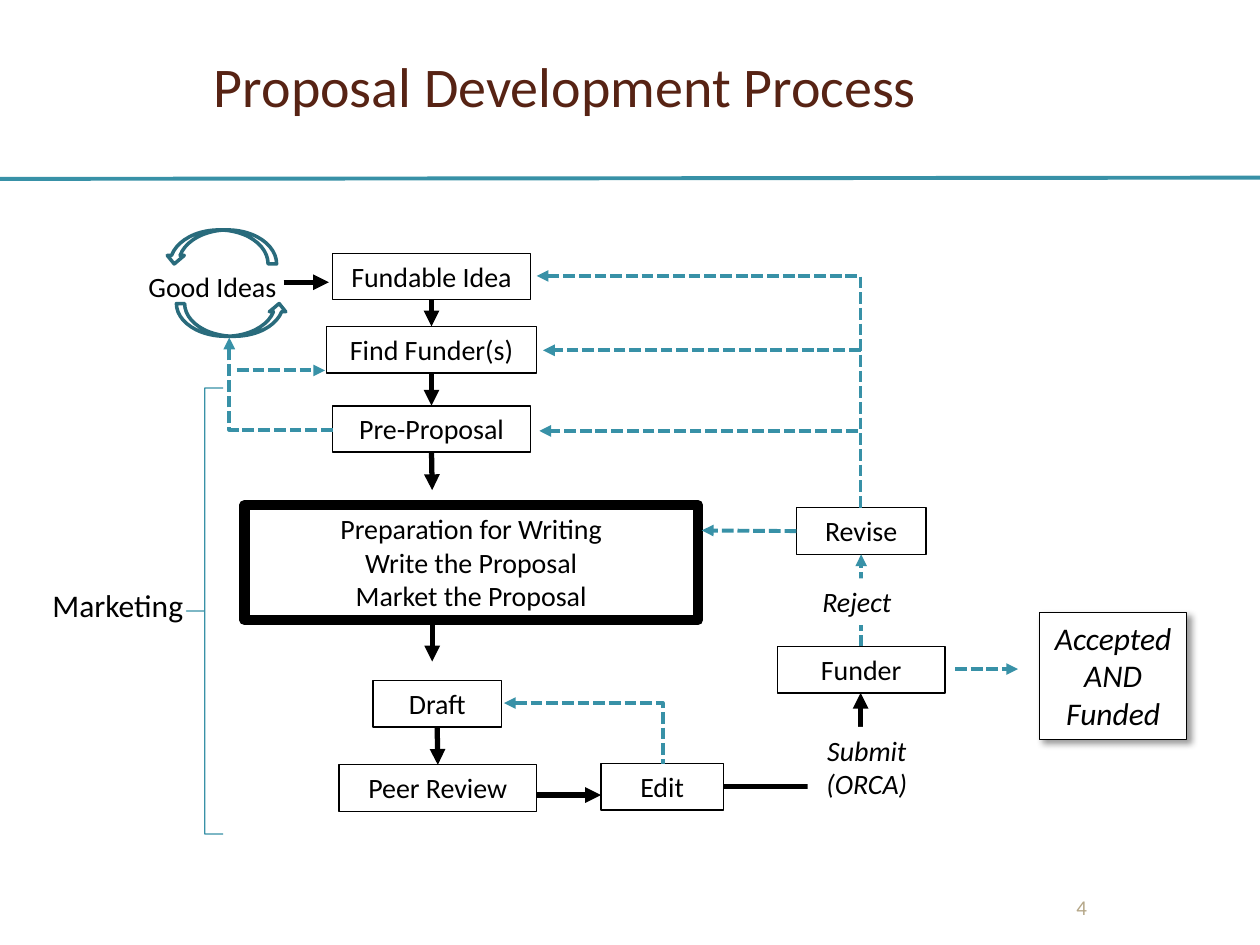
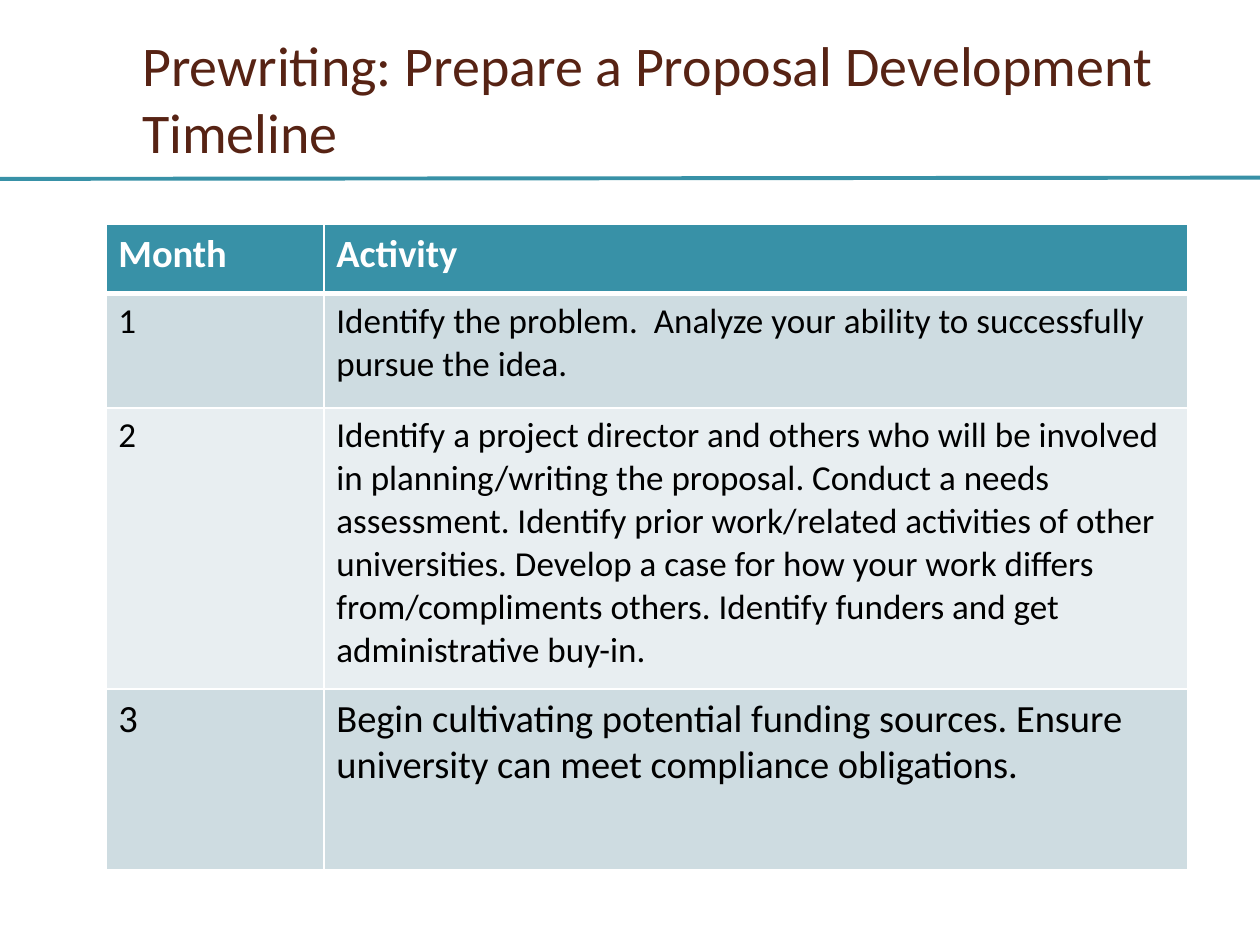
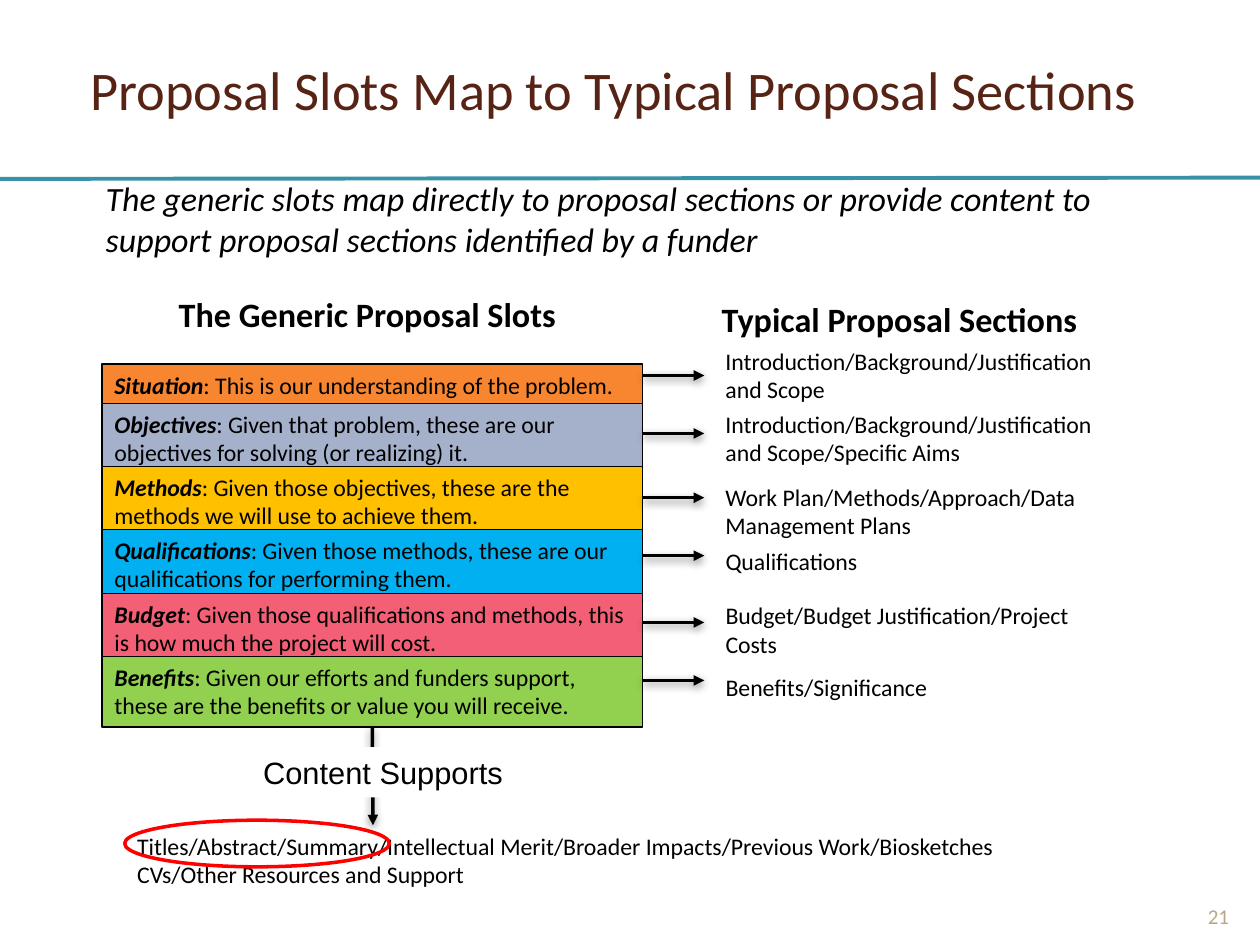
from dataclasses import dataclass

from lxml import etree
from pptx import Presentation
from pptx.dml.color import RGBColor
from pptx.enum.dml import MSO_LINE
from pptx.enum.shapes import MSO_CONNECTOR, MSO_SHAPE
from pptx.enum.text import MSO_ANCHOR, PP_ALIGN
from pptx.oxml.ns import qn
from pptx.util import Inches, Pt

LEFT, CENTER = PP_ALIGN.LEFT, PP_ALIGN.CENTER
TOP, MIDDLE, BOTTOM = MSO_ANCHOR.TOP, MSO_ANCHOR.MIDDLE, MSO_ANCHOR.BOTTOM
STRAIGHT, ELBOW = MSO_CONNECTOR.STRAIGHT, MSO_CONNECTOR.ELBOW
SHORT_DASH = MSO_LINE.SQUARE_DOT
RECTANGLE, OVAL = MSO_SHAPE.RECTANGLE, MSO_SHAPE.OVAL
CURVED_ARROW, BRACE = MSO_SHAPE.CURVED_RIGHT_ARROW, MSO_SHAPE.LEFT_BRACE
SITE_TOP, SITE_LEFT, SITE_BOTTOM = 0, 1, 2

BLACK, WHITE, RED = "000000", "FFFFFF", "FF0000"
TEAL, DARK_TEAL = "3891A7", "296B7C"
BROWN, TAN = "572314", "B5A788"
BAND_DARK, BAND_LIGHT = "CEDCE1", "E8EEF1"


@dataclass(frozen=True)
class TextStyle:
    size: float
    color: str = BLACK
    bold: bool = False
    italic: bool = False
    align: int = LEFT
    anchor: int = TOP
    font: str = "Calibri"


@dataclass(frozen=True)
class Shadow:
    alpha: int
    blur: float
    distance: float
    angle: int


@dataclass(frozen=True)
class Box:
    text: str
    at: tuple
    line_width: float = 0.75
    fill: str = ""


@dataclass(frozen=True)
class Arrow:
    start: tuple
    end: tuple
    color: str = BLACK
    width: float = 3
    bent: bool = False  # horizontal leg first, then vertical
    head: str = "tailEnd"
    begin_at: tuple = ()  # (box text, connection site)
    end_at: tuple = ()


@dataclass(frozen=True)
class Slot:
    name: str
    meaning: str
    color: str
    top: float
    height: float
    arrow_y: float
    section: str
    section_top: float
    section_width: float = 3.3


TITLE = TextStyle(32, BROWN, anchor=MIDDLE)
PAGE_NUMBER = TextStyle(12, TAN, align=CENTER, anchor=BOTTOM)
BOX_TEXT = TextStyle(16, align=CENTER)
BOX_ITALIC = TextStyle(16, italic=True, align=CENTER)
SMALL = TextStyle(13.6)
HEADING = TextStyle(19.5, bold=True)
CARD_SHADOW = Shadow(40, 4, 3, 45)
ARROW_SHADOW = Shadow(43, 5, 2, 90)


# ---- Shared helpers ----
def rgb(color: str) -> RGBColor:
    return RGBColor.from_string(color)


def inches(values: tuple) -> list:
    return [Inches(value) for value in values]


def add_run(paragraph, text: str, style: TextStyle, **changes) -> None:
    run = paragraph.add_run()
    run.text = text
    formats = {"name": style.font, "size": Pt(style.size),
               "bold": style.bold, "italic": style.italic} | changes
    for name, value in formats.items():
        setattr(run.font, name, value)
    run.font.color.rgb = rgb(style.color)


def write_text(frame, text: str, style: TextStyle, lead: str = "") -> None:
    """Write one paragraph per line; lead opens the text in bold italic."""
    frame.word_wrap = True
    frame.vertical_anchor = style.anchor
    for index, line in enumerate(text.split("\n")):
        paragraph = frame.add_paragraph() if index else frame.paragraphs[0]
        paragraph.alignment = style.align
        if lead and not index:
            add_run(paragraph, lead, style, bold=True, italic=True)
        add_run(paragraph, line, style)


def add_text(slide, text: str, at: tuple, style: TextStyle) -> None:
    write_text(slide.shapes.add_textbox(*inches(at)).text_frame, text, style)


def set_shadow(shape, shadow: Shadow) -> None:
    properties = shape._element.spPr
    effects = properties.find(qn("a:effectLst"))
    outer = etree.SubElement(effects, qn("a:outerShdw"), {
        "blurRad": str(Pt(shadow.blur)), "dist": str(Pt(shadow.distance)),
        "dir": str(shadow.angle * 60000), "rotWithShape": "0"})
    color = etree.SubElement(outer, qn("a:srgbClr"), val=BLACK)
    etree.SubElement(color, qn("a:alpha"), val=str(shadow.alpha * 1000))


def add_shape(slide, kind, at: tuple, fill: str = "", line: str = "",
              line_width: float = 0.75):
    shape = slide.shapes.add_shape(kind, *inches(at))
    shape.shadow.inherit = False
    if fill:
        shape.fill.solid()
        shape.fill.fore_color.rgb = rgb(fill)
    else:
        shape.fill.background()
    if line:
        shape.line.color.rgb = rgb(line)
        shape.line.width = Pt(line_width)
    else:
        shape.line.fill.background()
    return shape


def add_line(slide, start: tuple, end: tuple, color: str, width: float,
             dashed: bool = False, head: str = "", bent: bool = False):
    kind = ELBOW if bent else STRAIGHT
    connector = slide.shapes.add_connector(kind, *inches(start + end))
    properties = connector._element.spPr
    if bent:
        properties.find(qn("a:prstGeom")).set("prst", "bentConnector2")
    connector.line.color.rgb = rgb(color)
    connector.line.width = Pt(width)
    if dashed:
        connector.line.dash_style = SHORT_DASH
    if head:
        etree.SubElement(properties.find(qn("a:ln")), qn(f"a:{head}"), type="triangle")
    etree.SubElement(properties, qn("a:effectLst"))
    return connector


def add_base_slide(presentation, title: str, title_at: tuple,
                   title_style: TextStyle = TITLE):
    slide = presentation.slides.add_slide(presentation.slide_layouts[6])
    add_line(slide, (0, 1.42), (10, 1.41), TEAL, 2.25)
    add_text(slide, title, title_at, title_style)
    return slide


# ---- Slide 1: process diagram ----
BOXES = [
    Box("Fundable Idea", (2.64, 2.01, 1.57, 0.37)),
    Box("Find Funder(s)", (2.59, 2.59, 1.67, 0.37)),
    Box("Pre-Proposal", (2.64, 3.22, 1.57, 0.37), 1),
    Box("Preparation for Writing\nWrite the Proposal\nMarket the Proposal",
        (1.94, 4.01, 3.6, 0.91), 6),
    Box("Draft", (2.96, 5.4, 1.02, 0.37)),
    Box("Peer Review", (2.69, 6.07, 1.57, 0.37)),
    Box("Edit", (4.77, 6.06, 0.97, 0.37)),
    Box("Funder", (6.17, 5.13, 1.33, 0.37), fill=WHITE),
    Box("Revise", (6.32, 4.03, 1.03, 0.37)),
]
FORWARD_ARROWS = [
    Arrow((2.25, 2.24), (2.61, 2.24)),
    Arrow((3.43, 2.38), (3.43, 2.59), begin_at=("Fundable Idea", SITE_BOTTOM),
          end_at=("Find Funder(s)", SITE_TOP)),
    Arrow((3.43, 2.96), (3.43, 3.22), begin_at=("Find Funder(s)", SITE_BOTTOM),
          end_at=("Pre-Proposal", SITE_TOP)),
    Arrow((3.43, 3.59), (3.43, 3.89), begin_at=("Pre-Proposal", SITE_BOTTOM)),
    Arrow((3.43, 4.96), (3.43, 5.25)),
    Arrow((3.47, 5.77), (3.47, 6.07), begin_at=("Draft", SITE_BOTTOM),
          end_at=("Peer Review", SITE_TOP)),
    Arrow((4.26, 6.31), (4.77, 6.31)),
    Arrow((5.74, 6.24), (6.83, 5.5), bent=True),
]
FEEDBACK_ARROWS = [
    Arrow(start, end, TEAL, 2.25, **options) for start, end, options in [
        ((2.64, 3.41), (1.82, 2.68), {"bent": True}),
        ((1.88, 2.94), (2.58, 2.94), {}),
        ((4, 5.58), (5.26, 6.06), {"bent": True, "head": "headEnd"}),
        ((4.26, 2.19), (6.83, 4.03), {"bent": True, "head": "headEnd"}),
        ((6.83, 5.13), (6.83, 4.4), {"begin_at": ("Funder", SITE_TOP),
                                     "end_at": ("Revise", SITE_BOTTOM)}),
        ((7.58, 5.31), (8.08, 5.31), {}),
        ((6.83, 2.78), (4.31, 2.78), {}),
        ((6.81, 3.42), (4.28, 3.42), {}),
        ((6.32, 4.21), (5.57, 4.21), {"begin_at": ("Revise", SITE_LEFT)}),
    ]
]


def build_process_slide(presentation) -> None:
    slide = add_base_slide(presentation, "Proposal Development Process",
                           (1.6, 0.17, 9, 1.01))
    add_text(slide, "4", (7.42, 6.95, 2.33, 0.4), PAGE_NUMBER)

    # Process steps
    steps = {}
    for box in BOXES:
        step = add_shape(slide, RECTANGLE, box.at, box.fill, BLACK, box.line_width)
        write_text(step.text_frame, box.text, BOX_TEXT)
        steps[box.text] = step

    # Cycle of ideas
    lower = add_shape(slide, CURVED_ARROW, (1.71, 2.1, 0.26, 0.88), line=DARK_TEAL,
                      line_width=2)
    upper = add_shape(slide, CURVED_ARROW, (1.62, 1.52, 0.27, 0.88), line=DARK_TEAL,
                      line_width=2)
    for curve in (lower, upper):
        curve.rotation = 90
    for flip in ("flipH", "flipV"):
        lower._element.spPr.find(qn("a:xfrm")).set(flip, "1")
    add_text(slide, "Good Ideas", (1.08, 2.09, 1.34, 0.29), TextStyle(16))

    # Flow and feedback
    for arrow in FORWARD_ARROWS + FEEDBACK_ARROWS:
        connector = add_line(slide, arrow.start, arrow.end, arrow.color, arrow.width,
                             arrow.color == TEAL, arrow.head, arrow.bent)
        for join, target in ((connector.begin_connect, arrow.begin_at),
                             (connector.end_connect, arrow.end_at)):
            if target:
                name, site = target
                join(steps[name], site)

    # Labels that interrupt the arrows
    for text, at in (("Submit (ORCA)", (6.41, 5.77, 0.94, 0.64)),
                     ("Reject", (6.33, 4.59, 0.94, 0.37))):
        label = add_shape(slide, RECTANGLE, at, WHITE)
        write_text(label.text_frame, text, BOX_ITALIC)

    # Outcome
    outcome = add_shape(slide, RECTANGLE, (8.25, 4.86, 1.17, 1.01), WHITE, BLACK)
    set_shadow(outcome, CARD_SHADOW)
    write_text(outcome.text_frame, "Accepted AND Funded",
               TextStyle(18, italic=True, align=CENTER))

    # Marketing bracket
    add_text(slide, "Marketing", (0.26, 4.6, 1.35, 0.4), TextStyle(18, align=CENTER))
    bracket = add_shape(slide, BRACE, (1.48, 3.08, 0.29, 3.54), line=TEAL)
    bracket.adjustments[0] = 0
    bracket.adjustments[1] = 0.5


# ---- Slide 2: timeline table ----
COLUMN_WIDTHS = (1.73, 6.86)
ROW_HEIGHTS = (0.55, 0.91, 2.23, 1.43)
ROW_FILLS = (TEAL, BAND_DARK, BAND_LIGHT, BAND_DARK)
ROW_STYLES = (TextStyle(22, WHITE, bold=True), TextStyle(20), TextStyle(20),
              TextStyle(22))
TIMELINE = (
    ("Month", "Activity"),
    ("1", "Identify the problem.  Analyze your ability to successfully pursue the idea."),
    ("2", "Identify a project director and others who will be involved in "
          "planning/writing the proposal. Conduct a needs assessment. Identify prior "
          "work/related activities of other universities. Develop a case for how your "
          "work differs from/compliments others. Identify funders and get "
          "administrative buy-in."),
    ("3", "Begin cultivating potential funding sources. Ensure university can meet "
          "compliance obligations."),
)


def set_borders(cell, top: float, bottom: float) -> None:
    properties = cell._tc.get_or_add_tcPr()
    for side, width in {"lnL": 1, "lnR": 1, "lnT": top, "lnB": bottom}.items():
        border = etree.SubElement(properties, qn(f"a:{side}"), w=str(Pt(width)))
        fill = etree.SubElement(border, qn("a:solidFill"))
        etree.SubElement(fill, qn("a:srgbClr"), val=WHITE)


def build_timeline_slide(presentation) -> None:
    slide = add_base_slide(presentation,
                           "Prewriting: Prepare a Proposal Development Timeline",
                           (1.03, 0, 8.74, 1.55))
    table = slide.shapes.add_table(len(ROW_HEIGHTS), len(COLUMN_WIDTHS),
                                   *inches((0.84, 1.78, 8.59, 5.12))).table
    for column, width in zip(table.columns, COLUMN_WIDTHS):
        column.width = Inches(width)
    for index, (row, height) in enumerate(zip(table.rows, ROW_HEIGHTS)):
        row.height = Inches(height)
        for cell, text in zip(row.cells, TIMELINE[index]):
            set_borders(cell, 3 if index == 1 else 1, 3 if index == 0 else 1)
            cell.fill.solid()
            cell.fill.fore_color.rgb = rgb(ROW_FILLS[index])
            write_text(cell.text_frame, text, ROW_STYLES[index])


# ---- Slide 3: slots and sections ----
SLOTS = [
    Slot("Situation", ": This is our understanding of the problem.", "F88631",
         2.89, 0.33, 2.98, "Introduction/Background/Justification and Scope", 2.7),
    Slot("Objectives", ": Given that problem, these are our objectives for solving "
         "(or realizing) it.", "A5B1CB", 3.2, 0.56, 3.44,
         "Introduction/Background/Justification and Scope/Specific Aims", 3.2),
    Slot("Methods", ": Given those objectives, these are the methods we will use to "
         "achieve them.", "FFC000", 3.7, 0.56, 3.95,
         "Work Plan/Methods/Approach/Data Management Plans", 3.78),
    Slot("Qualifications", ": Given those methods, these are our qualifications for "
         "performing them.", "00B0F0", 4.2, 0.56, 4.41, "Qualifications", 4.29, 2.71),
    Slot("Budget", ": Given those qualifications and methods, this is how much the "
         "project will cost.", "F35F74", 4.71, 0.56, 4.94,
         "Budget/Budget Justification/Project Costs", 4.72, 3.15),
    Slot("Benefits", ": Given our efforts and funders support, these are the benefits "
         "or value you will receive.", "92D050", 5.21, 0.56, 5.4,
         "Benefits/Significance", 5.29, 2.71),
]


def add_shadowed_arrow(slide, start: tuple, end: tuple):
    arrow = add_line(slide, start, end, BLACK, 2, head="tailEnd")
    set_shadow(arrow, ARROW_SHADOW)
    return arrow


def build_slots_slide(presentation) -> None:
    slide = add_base_slide(presentation, "Proposal Slots Map to Typical Proposal Sections",
                           (0.62, 0.1, 8.74, 1.21),
                           TextStyle(31.1, BROWN, anchor=MIDDLE))
    add_text(slide, "21", (9.42, 6.9, 0.5, 0.52), PAGE_NUMBER)
    add_text(slide, "The generic slots map directly to proposal sections or provide "
             "content to support proposal sections identified by a funder",
             (0.74, 1.36, 8.36, 0.75), TextStyle(19.4, italic=True, anchor=MIDDLE))
    add_text(slide, "The Generic Proposal Slots", (1.32, 2.28, 3.21, 0.43), HEADING)
    add_text(slide, "Typical Proposal Sections", (5.63, 2.32, 3.04, 0.43), HEADING)

    # Each slot points to its section
    for slot in SLOTS:
        bar = add_shape(slide, RECTANGLE, (0.81, slot.top, 4.29, slot.height),
                        slot.color, BLACK)
        write_text(bar.text_frame, slot.meaning, SMALL, slot.name)
        add_text(slide, slot.section,
                 (5.66, slot.section_top, slot.section_width, 0.56), SMALL)
        add_shadowed_arrow(slide, (5.1, slot.arrow_y), (5.59, slot.arrow_y))

    # Content supports below the last slot
    add_shadowed_arrow(slide, (2.96, 5.77), (2.96, 6.55)).begin_connect(bar, SITE_BOTTOM)
    add_text(slide, "Titles/Abstract/Summary/Intellectual Merit/Broader Impacts/"
             "Previous Work/Biosketches\nCVs/Other Resources and Support",
             (0.99, 6.55, 7.07, 0.79), SMALL)
    supports = add_shape(slide, RECTANGLE, (1.99, 5.93, 2.13, 0.4), WHITE)
    write_text(supports.text_frame, "Content Supports",
               TextStyle(17.6, anchor=MIDDLE, font="Arial"))
    add_shape(slide, OVAL, (0.99, 6.51, 2.1, 0.37), line=RED, line_width=2)


def main() -> None:
    presentation = Presentation()
    presentation.slide_width = Inches(10)
    presentation.slide_height = Inches(7.5)
    build_process_slide(presentation)
    build_timeline_slide(presentation)
    build_slots_slide(presentation)
    presentation.save("out.pptx")


if __name__ == "__main__":
    main()
